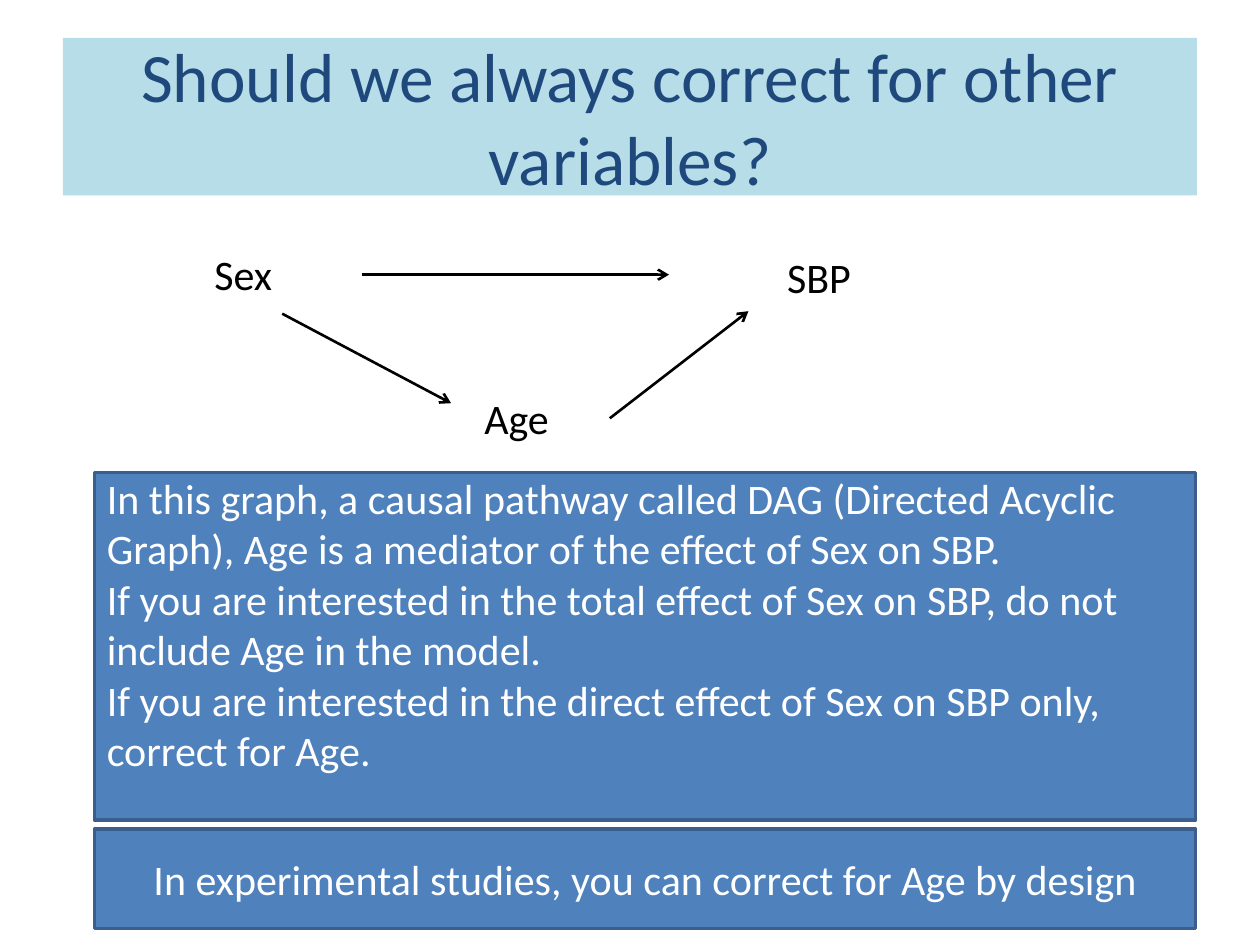
from lxml import etree
from pptx import Presentation
from pptx.dml.color import RGBColor
from pptx.enum.shapes import MSO_CONNECTOR as CONN, MSO_SHAPE as SHAPE
from pptx.enum.text import MSO_ANCHOR as ANCHOR, PP_ALIGN as ALIGN
from pptx.oxml.ns import qn
from pptx.util import Inches, Pt

WHITE = RGBColor(0xFF, 0xFF, 0xFF)
BLACK = RGBColor(0, 0, 0)
NAVY = RGBColor(0x1F, 0x49, 0x7D)
PALE_BLUE = RGBColor(0xB7, 0xDE, 0xE8)
BLUE = RGBColor(0x4F, 0x81, 0xBD)
DARK_BLUE = RGBColor(0x3A, 0x5F, 0x8C)

# Slide grid: 100 columns by 75 rows
prs = Presentation()
prs.slide_width, prs.slide_height = Inches(10), Inches(7.5)
COL, ROW = prs.slide_width / 100, prs.slide_height / 75


def add_text(sp, *lines, size=24, color=WHITE, align=ALIGN.CENTER, anchor=ANCHOR.MIDDLE):
    tf = sp.text_frame
    tf.word_wrap = True
    tf.vertical_anchor = anchor
    for i, line in enumerate(lines):
        p = tf.add_paragraph() if i else tf.paragraphs[0]
        p.alignment = align
        r = p.add_run()
        r.text = line
        r.font.name, r.font.size, r.font.color.rgb = "Calibri", Pt(size), color
    return tf


def add_box(s, box, fill, line=None):
    x, y, w, h = box
    sp = s.shapes.add_shape(SHAPE.RECTANGLE, round(x * COL), round(y * ROW),
                            round(w * COL), round(h * ROW))
    sp.shadow.inherit = False
    sp.fill.solid()
    sp.fill.fore_color.rgb = fill
    if line is None:
        sp.line.fill.background()
    else:
        sp.line.color.rgb, sp.line.width = line, Pt(2)
    return sp


def add_arrow(s, x1, y1, x2, y2):
    c = s.shapes.add_connector(CONN.STRAIGHT, round(x1 * COL), round(y1 * ROW),
                               round(x2 * COL), round(y2 * ROW))
    c.line.color.rgb, c.line.width = BLACK, Pt(1.5)
    etree.SubElement(c.line._get_or_add_ln(), qn("a:tailEnd"), type="arrow")
    etree.SubElement(c._element.spPr, qn("a:effectLst"))


def add_title(s, box, text):
    add_text(add_box(s, box, PALE_BLUE), text, size=39.6, color=NAVY)


def add_diagram(s, box):
    """Causal graph; nodes and arrows are offset from the box corner."""
    left, top, _, _ = box
    nodes = [("Sex", 0, 0, 14.2, 6.3),
             ("SBP", 45.7, 0.6, 14.2, 5.5),
             ("Age", 22.1, 11, 13.4, 7.1)]
    arrows = [(16.5, 3.2, 40.9, 3.2),    # Sex to SBP
              (36.2, 14.6, 47.2, 6.1),   # Age to SBP
              (10.2, 6.3, 23.6, 13.4)]   # Sex to Age
    for name, x, y, w, h in nodes:
        add_text(add_box(s, (left + x, top + y, w, h), WHITE), name, color=BLACK)
    for x1, y1, x2, y2 in arrows:
        add_arrow(s, left + x1, top + y1, left + x2, top + y2)


def add_notes_panel(s, box, *lines):
    tf = add_text(add_box(s, box, BLUE, DARK_BLUE), *lines,
                  align=ALIGN.LEFT, anchor=ANCHOR.TOP)
    tf.margin_top = 0


def add_conclusion(s, box, text):
    add_text(add_box(s, box, BLUE, DARK_BLUE), text)


def main():
    s = prs.slides.add_slide(prs.slide_layouts[6])
    add_title(s, (5, 3, 90, 12.5), "Should we always correct for other variables?")
    add_diagram(s, (12.2, 18.6, 59.9, 18.1))
    add_notes_panel(
        s, (7.5, 37.5, 87.4, 27.6),
        "In this graph, a causal pathway called DAG (Directed Acyclic Graph), "
        "Age is a mediator of the effect of Sex on SBP.",
        "If you are interested in the total effect of Sex on SBP, "
        "do not include Age in the model.",
        "If you are interested in the direct effect of Sex on SBP only, correct for Age.")
    add_conclusion(s, (7.5, 65.8, 87.4, 7.9),
                   "In experimental studies, you can correct for Age by design")
    prs.save("out.pptx")


if __name__ == "__main__":
    main()
